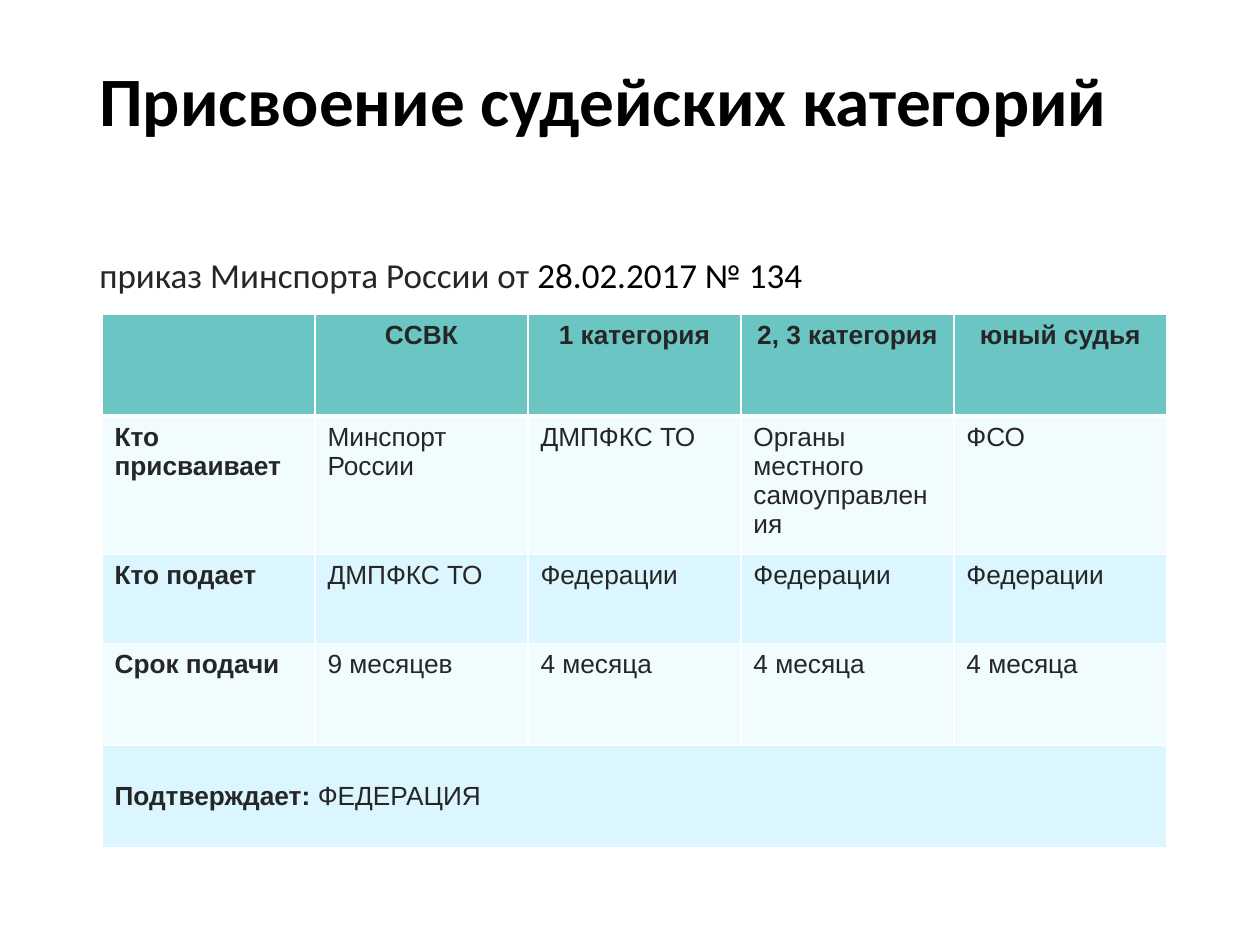
"""Build a slide with a table of referee category rules."""
from dataclasses import dataclass

from lxml.etree import SubElement
from pptx import Presentation
from pptx.dml.color import RGBColor as Color
from pptx.enum.text import MSO_ANCHOR as Anchor, PP_ALIGN as Align
from pptx.oxml.ns import qn
from pptx.util import Emu, Pt


@dataclass
class Theme:
    black: str = "000000"
    dark: str = "262626"
    white: str = "FFFFFF"
    header: str = "6BC5C3"
    light: str = "F1FCFE"
    band: str = "DBF6FE"
    heading_font: str = "Calibri"
    table_font: str = "Arial"
    title_size: float = 39.6
    body_size: float = 20
    table_size: float = 15


theme = Theme()


def px(value):
    """Turn pixels at 126 to the inch into EMU."""
    return Emu(round(value * 914400 / 126))


def add_run(paragraph, text, font, size, color, bold=False):
    """Add one formatted run."""
    run = paragraph.add_run()
    run.text = text
    run.font.name = font
    run.font.size = Pt(size)
    run.font.bold = bold
    run.font.color.rgb = Color.from_string(color)


presentation = Presentation()
presentation.slide_width = px(1260)
presentation.slide_height = px(945)
slide = presentation.slides.add_slide(presentation.slide_layouts[6])

text_boxes = [
    (50, 1137, 108, Anchor.MIDDLE, theme.title_size,
     [("Присвоение судейских категорий", theme.black, True)]),
    (252, 1086, 60, Anchor.TOP, theme.body_size,
     [("приказ Минспорта России от ", theme.dark, False),
      ("28.02.2017 № 134", theme.black, False)]),
]
for top, width, height, anchor, size, runs in text_boxes:
    shape = slide.shapes.add_textbox(px(87), px(top), px(width), px(height))
    shape.text_frame.word_wrap = True
    shape.text_frame.vertical_anchor = anchor
    paragraph = shape.text_frame.paragraphs[0]
    paragraph.line_spacing = 0.9
    for text, color, bold in runs:
        add_run(paragraph, text, theme.heading_font, size, color, bold)

rows = [
    ["", "ССВК", "1 категория", "2, 3 категория", "юный судья"],
    ["Кто присваивает", "Минспорт России", "ДМПФКС ТО",
     "Органы местного самоуправления", "ФСО"],
    ["Кто подает", "ДМПФКС ТО", "Федерации", "Федерации", "Федерации"],
    ["Срок подачи", "9 месяцев", "4 месяца", "4 месяца", "4 месяца"],
    ["Подтверждает: ", "", "", "", ""],
]
row_heights = [102, 137, 89, 102, 102]
row_fills = [theme.header, theme.light, theme.band, theme.light, theme.band]
column_width = 213

table = slide.shapes.add_table(
    len(rows), len(rows[0]), px(102), px(314),
    px(column_width * len(rows[0])), px(sum(row_heights))).table
for column in table.columns:
    column.width = px(column_width)

for row_index, texts in enumerate(rows):
    table.rows[row_index].height = px(row_heights[row_index])
    for column_index, text in enumerate(texts):
        cell = table.cell(row_index, column_index)
        properties = cell._tc.get_or_add_tcPr()
        for side in ("lnL", "lnR", "lnT", "lnB"):
            thick = (row_index, side) in ((0, "lnB"), (1, "lnT"))
            line = SubElement(properties, qn(f"a:{side}"), w=str(Pt(3 if thick else 1)))
            line_fill = SubElement(line, qn("a:solidFill"))
            SubElement(line_fill, qn("a:srgbClr"), val=theme.white)
        cell.fill.solid()
        cell.fill.fore_color.rgb = Color.from_string(row_fills[row_index])
        paragraph = cell.text_frame.paragraphs[0]
        paragraph.alignment = Align.CENTER if row_index == 0 else Align.LEFT
        if text:
            add_run(paragraph, text, theme.table_font, theme.table_size, theme.dark,
                    row_index == 0 or column_index == 0)

footer = table.cell(4, 0)
footer.merge(table.cell(4, 4))
footer.vertical_anchor = Anchor.MIDDLE
add_run(footer.text_frame.paragraphs[0], "ФЕДЕРАЦИЯ",
        theme.table_font, theme.table_size, theme.dark)

presentation.save("out.pptx")
